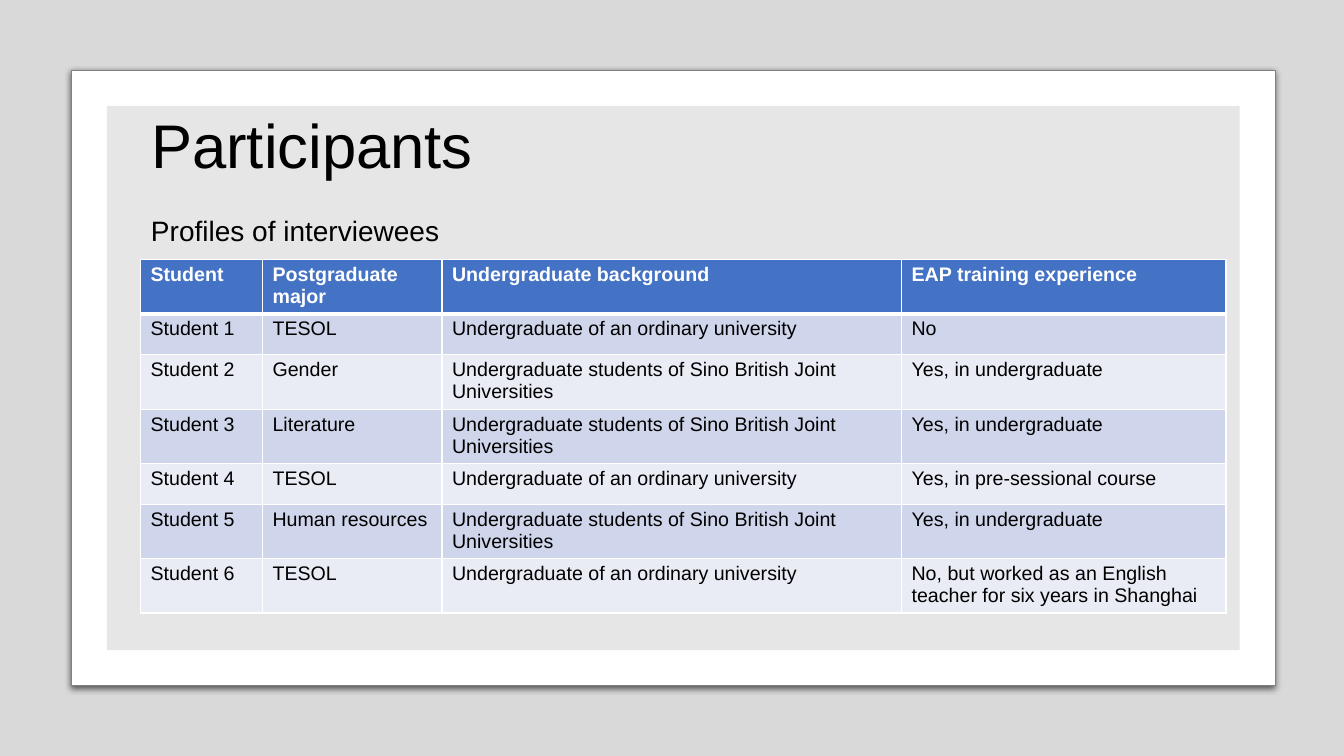
from dataclasses import dataclass

from lxml.etree import SubElement
from pptx import Presentation
from pptx.dml.color import RGBColor
from pptx.enum.shapes import MSO_SHAPE as Preset
from pptx.enum.text import MSO_ANCHOR as Anchor
from pptx.enum.text import PP_ALIGN as Align
from pptx.oxml.ns import qn
from pptx.shapes.autoshape import Shape
from pptx.slide import Slide
from pptx.table import _Cell as Cell
from pptx.text.text import TextFrame
from pptx.util import Pt

BLACK = RGBColor(0x00, 0x00, 0x00)
WHITE = RGBColor(0xFF, 0xFF, 0xFF)
GRAY = RGBColor(0x80, 0x80, 0x80)
LIGHT_GRAY = RGBColor(0xE7, 0xE6, 0xE6)
BLUE = RGBColor(0x44, 0x72, 0xC4)
BAND_DARK = RGBColor(0xCF, 0xD5, 0xEA)
BAND_LIGHT = RGBColor(0xE9, 0xEB, 0xF5)

ORDINARY = "Undergraduate of an ordinary university"
JOINT = "Undergraduate students of Sino British Joint Universities"
YES = "Yes, in undergraduate"

COLUMN_WIDTHS = (87.1, 128.2, 328.3, 231.8)
ROW_HEIGHT = 29.2
CELL_MARGINS = {"margin_top": Pt(3), "margin_bottom": Pt(2.2)}


@dataclass(frozen=True)
class Panel:
    preset: Preset
    left: float
    top: float
    width: float
    height: float
    color: RGBColor
    line: RGBColor | None = None
    opacity: int = 100
    shadow: bool = False


@dataclass(frozen=True)
class Interviewee:
    major: str
    background: str
    training: str


PANELS = (
    Panel(Preset.RECTANGLE, 0, 0, 960, 540, BLACK, opacity=15),
    Panel(Preset.ROUNDED_RECTANGLE, 51.1, 50.4, 859.7, 439.2, WHITE, GRAY, shadow=True),
    Panel(Preset.RECTANGLE, 76.3, 75.6, 809.3, 388.8, LIGHT_GRAY),
)

HEADINGS = ("Student", "Postgraduate major", "Undergraduate background",
            "EAP training experience")
INTERVIEWEES = (
    Interviewee("TESOL", ORDINARY, "No"),
    Interviewee("Gender", JOINT, YES),
    Interviewee("Literature", JOINT, YES),
    Interviewee("TESOL", ORDINARY, "Yes, in pre-sessional course"),
    Interviewee("Human resources", JOINT, YES),
    Interviewee("TESOL", ORDINARY,
                "No, but worked as an English teacher for six years in Shanghai"),
)


def add_shadow(shape: Shape) -> None:
    effects = shape._element.spPr.find(qn("a:effectLst"))
    shadow = SubElement(effects, qn("a:outerShdw"), blurRad=str(Pt(4.5)),
                        dist=str(Pt(1.5)), dir="5400000", algn="t", rotWithShape="0")
    color = SubElement(shadow, qn("a:srgbClr"), val=str(BLACK))
    SubElement(color, qn("a:alpha"), val="63000")


def add_panel(slide: Slide, panel: Panel) -> None:
    shape = slide.shapes.add_shape(panel.preset, Pt(panel.left), Pt(panel.top),
                                   Pt(panel.width), Pt(panel.height))
    shape.shadow.inherit = False
    shape.fill.solid()
    shape.fill.fore_color.rgb = panel.color
    if panel.preset == Preset.ROUNDED_RECTANGLE:
        shape.adjustments[0] = 0
    if panel.line is None:
        shape.line.fill.background()
    else:
        shape.line.color.rgb = panel.line
        shape.line.width = Pt(0.75)
    if panel.opacity < 100:
        color = shape._element.spPr.find(qn("a:solidFill"))[0]
        SubElement(color, qn("a:alpha"), val=str(panel.opacity * 1000))
    if panel.shadow:
        add_shadow(shape)


def write_text(frame: TextFrame, text: str, size: float, color: RGBColor = BLACK,
               bold: bool = False, line_spacing: float = 1.0) -> None:
    frame.word_wrap = True
    paragraph = frame.paragraphs[0]
    paragraph.alignment = Align.LEFT
    paragraph.line_spacing = line_spacing
    run = paragraph.add_run()
    run.text = text
    for name, value in {"name": "Arial", "size": Pt(size), "bold": bold}.items():
        setattr(run.font, name, value)
    run.font.color.rgb = color


def add_borders(cell: Cell, widths: dict[str, float]) -> None:
    properties = cell._tc.get_or_add_tcPr()
    for side, width in widths.items():
        line = SubElement(properties, qn(f"a:ln{side}"), w=str(Pt(width)))
        fill = SubElement(line, qn("a:solidFill"))
        SubElement(fill, qn("a:srgbClr"), val=str(WHITE))


def add_interviewee_table(slide: Slide) -> None:
    rows = [HEADINGS] + [
        (f"Student {number}", person.major, person.background, person.training)
        for number, person in enumerate(INTERVIEWEES, start=1)
    ]
    table = slide.shapes.add_table(
        len(rows), len(COLUMN_WIDTHS), Pt(100.4), Pt(185.4),
        Pt(sum(COLUMN_WIDTHS)), Pt(ROW_HEIGHT * len(rows))).table
    for column, width in zip(table.columns, COLUMN_WIDTHS):
        column.width = Pt(width)
    for row_index, values in enumerate(rows):
        table.rows[row_index].height = Pt(ROW_HEIGHT)
        is_header = row_index == 0
        band = BAND_DARK if row_index % 2 else BAND_LIGHT
        borders = {"L": 1, "R": 1, "T": 3 if row_index == 1 else 1,
                   "B": 3 if is_header else 1}
        for column_index, value in enumerate(values):
            cell = table.cell(row_index, column_index)
            for name, margin in CELL_MARGINS.items():
                setattr(cell, name, margin)
            add_borders(cell, borders)
            cell.fill.solid()
            cell.fill.fore_color.rgb = BLUE if is_header else band
            write_text(cell.text_frame, value, 14, WHITE if is_header else BLACK, is_header)


def format_title(slide: Slide) -> None:
    """Place the title placeholder in front of the panels and fill it."""
    title = slide.shapes.title
    title.element.getparent().append(title.element)
    bounds = {"left": 100.8, "top": 69.1, "width": 758.9, "height": 73.4}
    for name, value in bounds.items():
        setattr(title, name, Pt(value))
    title.text_frame.vertical_anchor = Anchor.MIDDLE
    write_text(title.text_frame, "Participants", 44, line_spacing=0.9)


def main() -> None:
    presentation = Presentation()
    presentation.slide_width = Pt(960)
    presentation.slide_height = Pt(540)
    slide = presentation.slides.add_slide(presentation.slide_layouts[5])
    for panel in PANELS:
        add_panel(slide, panel)
    format_title(slide)
    subtitle = slide.shapes.add_textbox(Pt(100.8), Pt(152), Pt(758.9), Pt(28))
    write_text(subtitle.text_frame, "Profiles of interviewees", 20, line_spacing=0.9)
    add_interviewee_table(slide)
    presentation.save("out.pptx")


if __name__ == "__main__":
    main()
